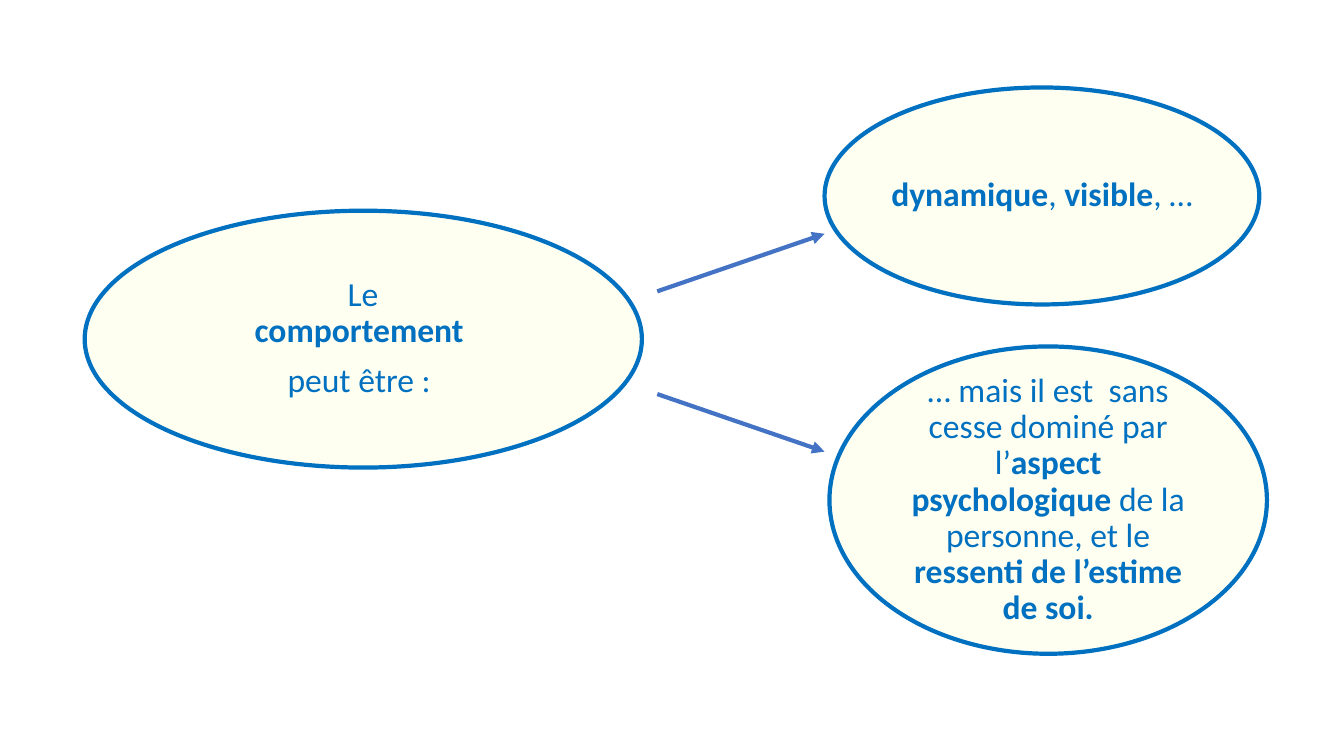
from lxml import etree
from pptx import Presentation
from pptx.dml.color import RGBColor
from pptx.enum import shapes, text
from pptx.oxml.ns import qn
from pptx.util import Pt

# Content: paragraphs are lists of (text, bold) runs
BEHAVIOUR = [[("Le ", False), ("comportement ", True)],
             [("peut être : ", False)]]
VISIBLE = [[("dynamique", True), (", ", False), ("visible", True), (", …", False)]]
PSYCHOLOGICAL = [[("… mais il est  sans cesse dominé par l’", False),
                  ("aspect psychologique ", True),
                  ("de la personne, et le ", False),
                  ("ressenti de l’estime de soi.", True)]]

THEME = {"font": "Calibri", "size": 24, "blue": "0070C0", "arrow": "4472C4",
         "cream": "FFFFCC", "opacity": 26, "line": 3}

# Layout in points: left, top, width, height
BEHAVIOUR_OVAL = (60.5, 150.5, 398, 183.5)
BEHAVIOUR_TEXT = (171.5, 194.5, 175.5, 94.5)
# Oval, its text
ASPECTS = [((592.5, 247.5, 312.5, 219.5), PSYCHOLOGICAL),
           ((589, 62.5, 310.5, 155), VISIBLE)]
# Arrows mirror each other about one horizontal axis
ARROW_X = (469.5, 589)
ARROW_AXIS, ARROW_NEAR, ARROW_FAR = 244.8, 36.7, 77.8


def rgb(name):
    return RGBColor.from_string(THEME[name])


def write(tf, paragraphs, *, anchor, insets, before=0):
    tf.word_wrap = True
    tf.vertical_anchor = anchor
    tf.margin_left = tf.margin_right = Pt(insets[0])
    tf.margin_top = tf.margin_bottom = Pt(insets[1])
    for i, runs in enumerate(paragraphs):
        p = tf.add_paragraph() if i else tf.paragraphs[0]
        p.alignment = text.PP_ALIGN.CENTER
        p.line_spacing = 0.9
        p.space_before = Pt(before)
        for words, bold in runs:
            r = p.add_run()
            r.text = words
            r.font.name = THEME["font"]
            r.font.size = Pt(THEME["size"])
            r.font.bold = bold
            r.font.color.rgb = rgb("blue")


def add_oval(slide, box):
    sp = slide.shapes.add_shape(shapes.MSO_SHAPE.OVAL, *map(Pt, box))
    sp.shadow.inherit = False
    sp.fill.solid()
    sp.fill.fore_color.rgb = rgb("cream")
    color = sp.fill._xPr.find(qn("a:solidFill"))[0]
    etree.SubElement(color, qn("a:alpha"), val=str(THEME["opacity"] * 1000))
    sp.line.color.rgb = rgb("blue")
    sp.line.width = Pt(THEME["line"])
    return sp


def add_arrow(slide, x1, y1, x2, y2):
    cxn = slide.shapes.add_connector(shapes.MSO_CONNECTOR.STRAIGHT,
                                     *map(Pt, (x1, y1, x2, y2)))
    cxn.line.color.rgb = rgb("arrow")
    cxn.line.width = Pt(THEME["line"])
    etree.SubElement(cxn.line._get_or_add_ln(), qn("a:tailEnd"), type="triangle")
    etree.SubElement(cxn._element.spPr, qn("a:effectLst"))


def main():
    prs = Presentation()
    prs.slide_width, prs.slide_height = Pt(960), Pt(540)
    slide = prs.slides.add_slide(prs.slide_layouts[6])

    # Behaviour, on the left
    add_oval(slide, BEHAVIOUR_OVAL)
    tb = slide.shapes.add_textbox(*map(Pt, BEHAVIOUR_TEXT))
    write(tb.text_frame, BEHAVIOUR, anchor=text.MSO_ANCHOR.TOP,
          insets=(7.2, 3.6), before=10)

    # Its two aspects, on the right
    for box, paragraphs in ASPECTS:
        sp = add_oval(slide, box)
        write(sp.text_frame, paragraphs, anchor=text.MSO_ANCHOR.MIDDLE, insets=(2, 0))

    # Arrows up and down
    for side in (-1, 1):
        add_arrow(slide, ARROW_X[0], ARROW_AXIS + side * ARROW_NEAR,
                  ARROW_X[1], ARROW_AXIS + side * ARROW_FAR)

    prs.save("out.pptx")


if __name__ == "__main__":
    main()
